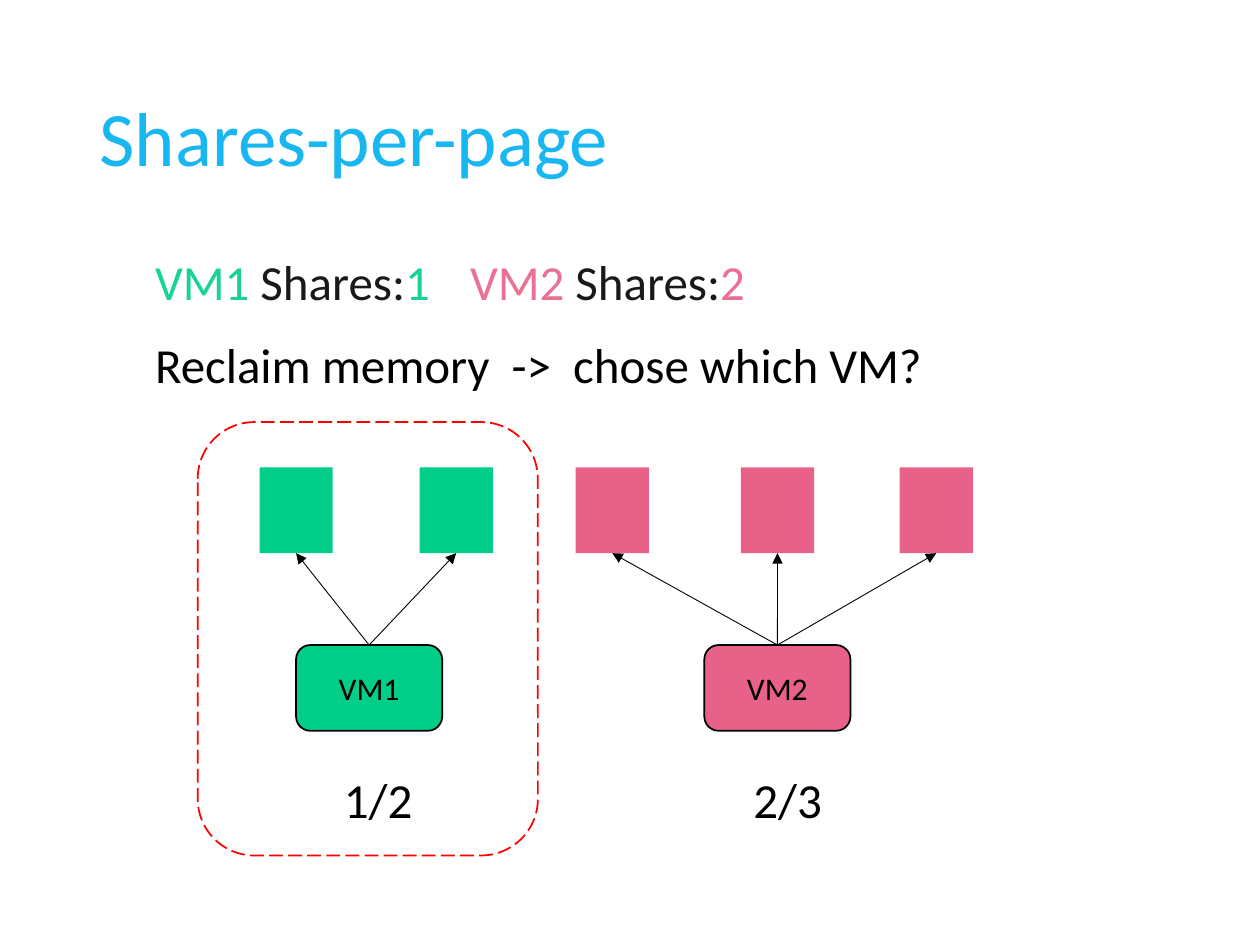
from lxml import etree
from pptx import Presentation
from pptx.dml.color import RGBColor
from pptx.enum.dml import MSO_LINE
from pptx.enum.shapes import MSO_CONNECTOR, MSO_SHAPE
from pptx.enum.text import MSO_ANCHOR, MSO_AUTO_SIZE, PP_ALIGN
from pptx.oxml.ns import qn
from pptx.util import Pt

RECT, ROUNDED = MSO_SHAPE.RECTANGLE, MSO_SHAPE.ROUNDED_RECTANGLE
STRAIGHT, LONG_DASH = MSO_CONNECTOR.STRAIGHT, MSO_LINE.LONG_DASH
MIDDLE, LEFT, CENTER = MSO_ANCHOR.MIDDLE, PP_ALIGN.LEFT, PP_ALIGN.CENTER
NO_AUTOFIT, GROW = MSO_AUTO_SIZE.NONE, MSO_AUTO_SIZE.SHAPE_TO_FIT_TEXT

COLOURS = {"white": "FFFFFF", "black": "000000", "red": "FF0000",
           "title": "00B0F0", "vm1": "00CE89", "vm2": "E86189"}


def add_span(para, text, size, colour, opacity=100):
    span = para.add_run()
    span.text = text
    for name, value in {"name": "Calibri", "size": Pt(size)}.items():
        setattr(span.font, name, value)
    span.font.color.rgb = RGBColor.from_string(COLOURS[colour])
    if opacity < 100:
        tint = span._r.get_or_add_rPr().find(".//" + qn("a:srgbClr"))
        etree.SubElement(tint, qn("a:alpha"), val=str(opacity * 1000))


def add_block(kind, left, top, width, height, fill, line=None):
    """Add a filled shape, outlined in 1 pt when a line colour is given."""
    block = page.shapes.add_shape(kind, Pt(left), Pt(top), Pt(width), Pt(height))
    block.shadow.inherit = False
    block.fill.solid()
    block.fill.fore_color.rgb = RGBColor.from_string(COLOURS[fill])
    if line:
        block.line.color.rgb = RGBColor.from_string(COLOURS[line])
        block.line.width = Pt(1)
    else:
        block.line.fill.background()
    return block


deck = Presentation()
deck.slide_width, deck.slide_height = Pt(720), Pt(540)
page = deck.slides.add_slide(deck.slide_layouts[1])
title, body = page.placeholders

# Title and list
frames = [
    (title, {"left": 49.7, "top": 28.8, "width": 620.6, "height": 104.4}),
    (body, {"left": 81.4, "top": 133.2, "width": 552.2, "height": 378}),
]
for box, place in frames:
    for name, value in place.items():
        setattr(box, name, Pt(value))
    box.text_frame.auto_size = NO_AUTOFIT

title.text_frame.vertical_anchor = MIDDLE
heading = title.text_frame.paragraphs[0]
heading.alignment, heading.line_spacing = LEFT, 0.9
add_span(heading, "Shares-per-page", 44, "title", 90)

shares = body.text_frame.paragraphs[0]
question = body.text_frame.add_paragraph()
for para in (shares, question):
    para.line_spacing, para.space_before = 1.2, Pt(7.5)
    properties = para._p.get_or_add_pPr()
    properties.set("marL", "0")
    properties.set("indent", "0")
    etree.SubElement(properties, qn("a:buNone"))

tabs = etree.SubElement(shares._p.get_or_add_pPr(), qn("a:tabLst"))
etree.SubElement(tabs, qn("a:tab"), pos=str(Pt(277)), algn="l")
for text, colour in [("VM1", "vm1"), (" Shares:", "black"), ("1\t", "vm1"),
                     ("VM2", "vm2"), (" Shares:", "black"), ("2", "vm2")]:
    add_span(shares, text, 28, colour, 90)
add_span(question, "Reclaim memory  ->  chose which VM?", 28, "black")

# Dashed frame around the chosen machine, behind the texts
choice = add_block(ROUNDED, 113, 241.2, 194.4, 247.7, "white", "red")
choice.line.dash_style = LONG_DASH
page.shapes._spTree.insert(2, choice._element)

# Each machine with its memory pages and its shares per page
machines = [
    ("VM1", "vm1", 169.2, [148.3, 239.8], "1/2", 189.4),
    ("VM2", "vm2", 402.5, [329, 423.4, 514.1], "2/3", 423.4),
]
for name, colour, left, memory_lefts, ratio, ratio_left in machines:
    machine = add_block(ROUNDED, left, 368.6, 83.5, 49, colour, "black")
    machine.text_frame.vertical_anchor = MIDDLE
    label = machine.text_frame.paragraphs[0]
    label.alignment = CENTER
    add_span(label, name, 18, "black")

    for memory_left in memory_lefts:
        memory = add_block(RECT, memory_left, 267.1, 41.8, 49, colour)
        arrow = page.shapes.add_connector(STRAIGHT, 0, 0, 0, 0)
        arrow.begin_connect(machine, 0)
        arrow.end_connect(memory, 2)
        arrow.line.color.rgb = RGBColor.from_string(COLOURS["black"])
        arrow.line.width = Pt(0.5)
        outline = arrow._element.spPr.find(qn("a:ln"))
        etree.SubElement(outline, qn("a:tailEnd"), type="triangle")
        etree.SubElement(arrow._element.spPr, qn("a:effectLst"))

    box = page.shapes.add_textbox(Pt(ratio_left), Pt(436.3), Pt(181.4), Pt(41))
    box.text_frame.word_wrap = True
    box.text_frame.auto_size = GROW
    add_span(box.text_frame.paragraphs[0], ratio, 28, "black")

deck.save("out.pptx")
